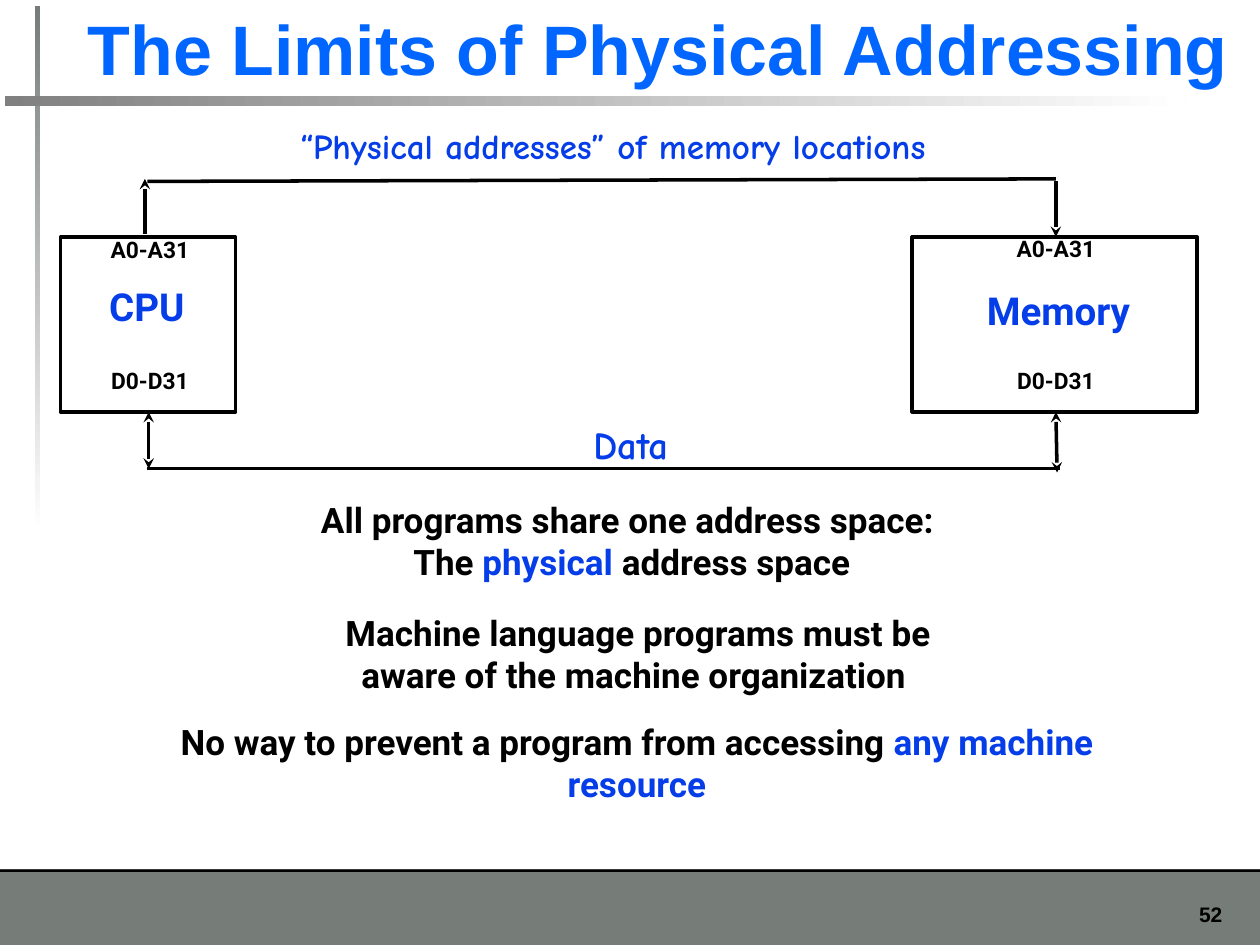
"""Build the slide on the limits of physical addressing."""
from lxml import etree
from pptx import Presentation
from pptx.dml.color import RGBColor
from pptx.enum.shapes import MSO_CONNECTOR, MSO_SHAPE
from pptx.enum.text import MSO_ANCHOR, PP_ALIGN
from pptx.oxml.ns import qn
from pptx.util import Inches, Pt

RECTANGLE = MSO_SHAPE.RECTANGLE
STRAIGHT = MSO_CONNECTOR.STRAIGHT
LEFT, CENTER, RIGHT = PP_ALIGN.LEFT, PP_ALIGN.CENTER, PP_ALIGN.RIGHT
TOP, BOTTOM = MSO_ANCHOR.TOP, MSO_ANCHOR.BOTTOM
BLACK, BLUE, GRAY, WHITE = "000000", "053DE8", "767D79", "FFFFFF"


def color(hex_string):
    """Turn a hex string into a color."""
    return RGBColor.from_string(hex_string)


def add_text(place, paragraphs, size, font, align=CENTER, inset=(0, 0), wrap=True,
             spacing=None, anchor=TOP, indent=0):
    """Add a text box whose paragraphs are lists of (text, color) runs."""
    box = slide.shapes.add_textbox(*map(Inches, place))
    frame = box.text_frame
    frame.word_wrap = wrap
    frame.vertical_anchor = anchor
    frame.margin_left = frame.margin_right = Inches(inset[0])
    frame.margin_top = frame.margin_bottom = Inches(inset[1])
    for number, runs in enumerate(paragraphs):
        para = frame.add_paragraph() if number else frame.paragraphs[0]
        para.alignment = align
        if indent:
            para._p.get_or_add_pPr().set("marL", str(Inches(indent)))
        if spacing:
            para.line_spacing = Pt(spacing)
        for text, hex_string in runs:
            span = para.add_run()
            span.text = text
            span.font.size = Pt(size)
            span.font.name = font
            span.font.bold = True
            span.font.color.rgb = color(hex_string)


deck = Presentation()
deck.slide_width, deck.slide_height = Inches(10), Inches(7.5)
slide = deck.slides.add_slide(deck.slide_layouts[6])

bars = [
    ((0, 6.9, 10, 0.6), GRAY, None),
    ((0, 6.9, 10, 0.02), BLACK, None),
    ((0.28, 0.05, 0.04, 4.17), GRAY, 270),
    ((0.04, 0.76, 9.37, 0.08), "808080", 0),
]
for place, hex_string, angle in bars:
    bar = slide.shapes.add_shape(RECTANGLE, *map(Inches, place))
    bar.shadow.inherit = False
    bar.line.fill.background()
    if angle is None:
        bar.fill.solid()
        bar.fill.fore_color.rgb = color(hex_string)
    else:
        bar.fill.gradient()
        bar.fill.gradient_angle = angle
        for stop, stop_color in zip(bar.fill.gradient_stops, (hex_string, WHITE)):
            stop.color.rgb = color(stop_color)

add_text((9.17, 7.11, 0.63, 0.3), [[("52", BLACK)]], 12, "Arial",
         align=RIGHT, inset=(0.1, 0.05))
add_text((0.57, 0.04, 9.76, 0.72), [[("The Limits of Physical Addressing", "0066FF")]],
         40, "Arial", align=LEFT, inset=(0.1, 0.05), anchor=BOTTOM, indent=0.03)

for left, width in [(0.48, 1.39), (7.24, 2.26)]:
    unit = slide.shapes.add_shape(RECTANGLE, Inches(left), Inches(1.88),
                                  Inches(width), Inches(1.39))
    unit.shadow.inherit = False
    unit.fill.background()
    unit.line.color.rgb = color(BLACK)
    unit.line.width = Pt(2)

wires = [
    ((1.17, 3.72, 8.41, 3.72), ()),
    ((8.38, 3.27, 8.39, 3.75), ("headEnd", "tailEnd")),
    ((1.18, 3.27, 1.18, 3.72), ("headEnd", "tailEnd")),
    ((8.38, 1.42, 1.17, 1.44), ()),
    ((8.38, 1.44, 8.38, 1.88), ("tailEnd",)),
    ((1.15, 1.42, 1.15, 1.86), ("headEnd",)),
]
for ends, arrows in wires:
    wire = slide.shapes.add_connector(STRAIGHT, *map(Inches, ends))
    wire.line.color.rgb = color(BLACK)
    wire.line.width = Pt(2)
    for arrow in arrows:
        etree.SubElement(wire.line._ln, qn(f"a:{arrow}"), type="stealth")
    etree.SubElement(wire._element.spPr, qn("a:effectLst"))

unit_labels = [
    ("CPU", (0.77, 2.38, 0.79, 0.36), 22, 17, BLUE),
    ("Memory", (7.74, 2.38, 1.32, 0.36), 22, 19, BLUE),
    ("A0-A31", (0.81, 1.99, 0.76, 0.1), 13, 7, BLACK),
    ("A0-A31", (8, 1.98, 0.76, 0.1), 13, 7, BLACK),
    ("D0-D31", (0.81, 3.03, 0.76, 0.22), 13, 7, BLACK),
    ("D0-D31", (8, 3.03, 0.76, 0.22), 13, 7, BLACK),
]
for text, place, size, spacing, hex_string in unit_labels:
    add_text(place, [[(text, hex_string)]], size, "Roboto", wrap=False, spacing=spacing)

add_text((2.01, 0.99, 5.81, 0.33), [[("“Physical addresses” of memory locations ", BLUE)]],
         20, "Comic Neue")
add_text((4.5, 3.34, 1.01, 0.35), [[("Data", BLUE)]], 22, "Comic Neue")

statements = [
    ((1.3, 3.96, 7.43, 0.67), [
        [("All programs share one address space: ", BLACK)],
        [("The ", BLACK), ("physical", BLUE), (" address space", BLACK)],
    ]),
    ((1.38, 4.85, 7.37, 0.67), [
        [("Machine language programs must be", BLACK)],
        [("aware of the machine organization ", BLACK)],
    ]),
    ((1.38, 5.72, 7.35, 0.67), [
        [("No way to prevent a program from accessing ", BLACK),
         ("any machine resource", BLUE)],
    ]),
]
for place, paragraphs in statements:
    add_text(place, paragraphs, 20, "Roboto")

deck.save("out.pptx")
